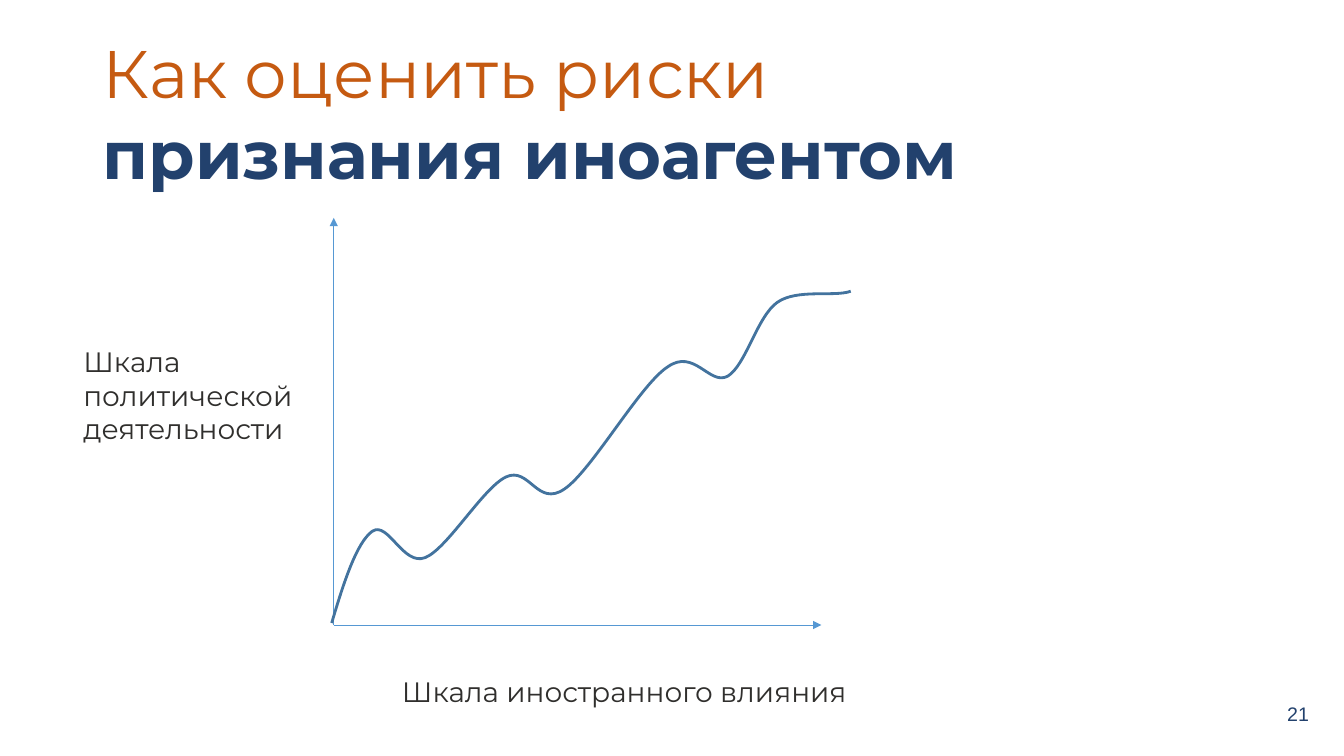
from pptx import Presentation
from pptx.dml.color import RGBColor
from pptx.enum.shapes import MSO_CONNECTOR as Conn
from pptx.enum.text import MSO_ANCHOR as Anchor, MSO_AUTO_SIZE as AutoSize, PP_ALIGN as Align
from pptx.oxml.ns import qn
from pptx.util import Cm, Pt
from lxml.etree import SubElement

ORANGE = RGBColor(0xC5, 0x5A, 0x11)
NAVY = RGBColor(0x22, 0x41, 0x6D)
AXIS_BLUE = RGBColor(0x56, 0x98, 0xD3)
CURVE_BLUE = RGBColor(0x43, 0x73, 0x9E)
INK = RGBColor(0x30, 0x2F, 0x2D)

RISK_CURVE = [
    (-0.05, 0.05),
    (0.25, 1.07), (0.58, 2.08), (0.97, 2.36),
    (1.37, 2.64), (1.75, 1.47), (2.31, 1.70),
    (2.87, 1.93), (3.76, 3.45), (4.34, 3.73),
    (4.93, 4.01), (5.13, 2.95), (5.82, 3.43),
    (6.50, 3.89), (7.72, 6.05), (8.41, 6.50),
    (9.09, 6.99), (9.47, 6.02), (9.93, 6.27),
    (10.39, 6.55), (10.67, 7.77), (11.18, 8.13),
    (11.68, 8.48), (12.62, 8.26), (13.03, 8.41),
]


def add_title(s, x, y, w, h):
    sp = s.shapes.title
    sp.left, sp.top, sp.width, sp.height = Cm(x), Cm(y), Cm(w), Cm(h)
    tf = sp.text_frame
    tf.word_wrap = True
    tf.auto_size = AutoSize.NONE
    tf.vertical_anchor = Anchor.TOP
    p = tf.paragraphs[0]
    p.alignment = Align.LEFT
    p.line_spacing = 1.0
    p.font.size = Pt(48)
    p.font.name = "Montserrat"
    for text, color, bold in [("Как оценить риски ", ORANGE, False),
                              ("признания иноагентом", NAVY, True)]:
        r = p.add_run()
        r.text = text
        r.font.color.rgb = color
        r.font.bold = bold


def add_label(s, text, x, y, w, h, size=20, font="Montserrat", color=INK,
              align=Align.LEFT, anchor=Anchor.TOP, wrap=True):
    tf = s.shapes.add_textbox(Cm(x), Cm(y), Cm(w), Cm(h)).text_frame
    tf.word_wrap = wrap
    tf.vertical_anchor = anchor
    p = tf.paragraphs[0]
    p.text = text
    p.alignment = align
    p.font.size = Pt(size)
    p.font.name = font
    p.font.color.rgb = color


def add_axis(s, x1, y1, x2, y2):
    axis = s.shapes.add_connector(Conn.STRAIGHT, Cm(x1), Cm(y1), Cm(x2), Cm(y2))
    axis.line.color.rgb = AXIS_BLUE
    axis.line.width = Pt(0.75)
    SubElement(axis.line._get_or_add_ln(), qn("a:tailEnd"), type="triangle")
    SubElement(axis._element.spPr, qn("a:effectLst"))


def add_curve(s, x, y, points):
    pts = [(Cm(x + dx), Cm(y - dy)) for dx, dy in points]
    fb = s.shapes.build_freeform(*pts[0])
    fb.add_line_segments(pts[1:], close=False)
    sp = fb.convert_to_shape()
    sp.shadow.inherit = False
    sp.fill.background()
    sp.line.color.rgb = CURVE_BLUE
    sp.line.width = Pt(2)
    segments = list(sp._element.iter(qn("a:lnTo")))
    outline = segments[0].getparent()
    for i in range(0, len(segments), 3):
        bezier = SubElement(outline, qn("a:cubicBezTo"))
        for segment in segments[i:i + 3]:
            bezier.append(segment[0])
            outline.remove(segment)


def add_graph(s, x, y, w, h):
    bottom = y + h
    add_axis(s, x, bottom, x, y)
    add_axis(s, x, bottom, x + w, bottom)
    add_label(s, "Шкала политической деятельности", x - 6.56, y + 3.07, 6.05, 2.82)
    add_label(s, "Шкала иностранного влияния", x + 1.47, bottom + 1.12, 12.22, 1.12)
    add_curve(s, x, bottom, RISK_CURVE)


def main():
    prs = Presentation()
    prs.slide_width, prs.slide_height = Cm(33.87), Cm(19.05)
    s = prs.slides.add_slide(prs.slide_layouts[5])
    add_title(s, 2.34, 0.66, 25.37, 2.49)
    add_label(s, "21", 32.18, 17.4, 1.07, 1.17, size=14, font="Arial", color=NAVY,
              align=Align.CENTER, anchor=Anchor.MIDDLE, wrap=False)
    add_graph(s, 8.41, 5.49, 12.29, 10.26)
    prs.save("out.pptx")


if __name__ == "__main__":
    main()
